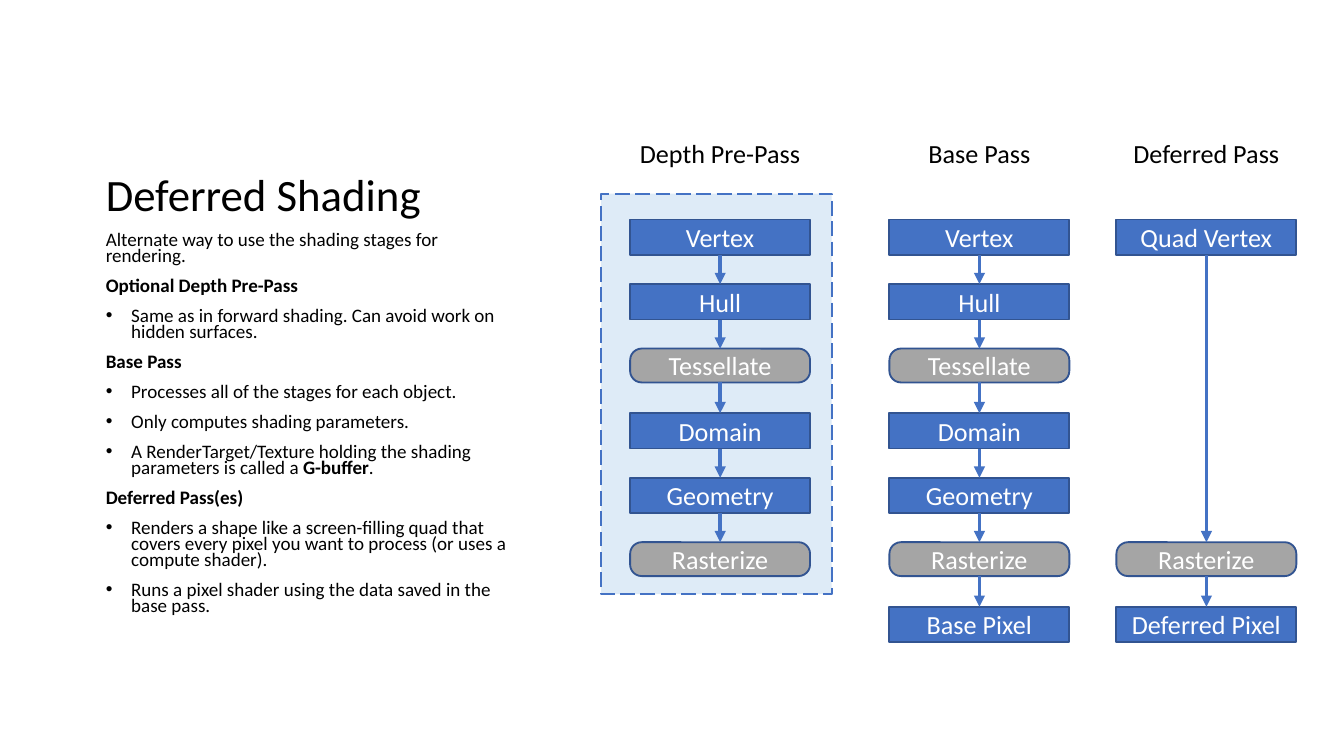
from dataclasses import dataclass
from typing import NamedTuple

from lxml.etree import SubElement
from pptx import Presentation
from pptx.dml.color import RGBColor
from pptx.enum.dml import MSO_LINE_DASH_STYLE as Dash
from pptx.enum.shapes import MSO_CONNECTOR as Connector, MSO_SHAPE as Shape
from pptx.enum.text import MSO_ANCHOR as Anchor, PP_ALIGN as Align
from pptx.oxml.ns import qn
from pptx.util import Cm, Pt


@dataclass(frozen=True)
class Theme:
    font: str = "Calibri"
    ink: str = "000000"
    white: str = "FFFFFF"
    blue: str = "4472C4"
    outline: str = "325491"
    gray: str = "A5A5A5"
    panel: str = "DEEBF7"
    title_size: float = 24
    body_size: float = 10.2
    label_size: float = 14


class Area(NamedTuple):
    left: float
    top: float
    width: float
    height: float


class Stage(NamedTuple):
    row: int
    name: str
    fixed: bool = False  # fixed-function stages are gray and rounded


class RenderPass(NamedTuple):
    heading: str
    heading_width: float
    left: float
    stages: list[Stage]


class Note(NamedTuple):
    spans: list[tuple[str, bool]]  # text, bold
    bullet: bool = False


THEME = Theme()
FIRST_ROW, ROW_STEP = 4.15, 1.22
STAGE_WIDTH, STAGE_HEIGHT, FIXED_HEIGHT = 3.4, 0.67, 0.64
BULLET_INDENT = 0.48
TITLE_AREA = Area(1.75, 0.97, 8.2, 3.33)
BODY_AREA = Area(1.75, 4.3, 8.2, 7.95)
PANEL_AREA = Area(11.36, 3.66, 4.36, 7.57)
HEADING_TOP, HEADING_HEIGHT = 2.47, 0.86

GEOMETRY_STAGES = [
    Stage(0, "Vertex"),
    Stage(1, "Hull"),
    Stage(2, "Tessellate", fixed=True),
    Stage(3, "Domain"),
    Stage(4, "Geometry"),
    Stage(5, "Rasterize", fixed=True),
]
PASSES = [
    RenderPass("Depth Pre-Pass", 3.58, 11.91, GEOMETRY_STAGES),
    RenderPass("Base Pass", 2.46, 16.81, [*GEOMETRY_STAGES, Stage(6, "Base Pixel")]),
    RenderPass("Deferred Pass", 3.3, 21.1, [
        Stage(0, "Quad Vertex"),
        Stage(5, "Rasterize", fixed=True),
        Stage(6, "Deferred Pixel"),
    ]),
]


def head(text: str) -> Note:
    return Note([(text, True)])


def item(text: str) -> Note:
    return Note([(text, False)], bullet=True)


NOTES = [
    Note([("Alternate way to use the shading stages for rendering.", False)]),
    head("Optional Depth Pre-Pass"),
    item("Same as in forward shading. Can avoid work on hidden surfaces."),
    head("Base Pass"),
    item("Processes all of the stages for each object."),
    item("Only computes shading parameters."),
    Note([
        ("A RenderTarget/Texture holding the shading parameters is called a ", False),
        ("G-buffer", True),
        (".", False),
    ], bullet=True),
    head("Deferred Pass(es)"),
    item("Renders a shape like a screen-filling quad that covers every pixel "
         "you want to process (or uses a compute shader)."),
    item("Runs a pixel shader using the data saved in the base pass."),
]


def color(value: str) -> RGBColor:
    return RGBColor.from_string(value)


def lengths(area: Area) -> list[Cm]:
    return [Cm(value) for value in area]


def add_span(para, text: str, *, size: float, ink: str = THEME.ink, bold: bool = False) -> None:
    span = para.add_run()
    span.text = text
    span.font.name = THEME.font
    span.font.size = Pt(size)
    span.font.bold = bold
    span.font.color.rgb = color(ink)


def add_text_box(shapes, area: Area, *, wrap: bool = True, anchor: Anchor = Anchor.TOP):
    frame = shapes.add_textbox(*lengths(area)).text_frame
    frame.word_wrap = wrap
    frame.vertical_anchor = anchor
    return frame


def add_bullet(para) -> None:
    props = para._p.get_or_add_pPr()
    props.set("marL", str(Cm(BULLET_INDENT)))
    props.set("indent", str(-Cm(BULLET_INDENT)))
    SubElement(props, qn("a:buFont"), typeface="Arial")
    SubElement(props, qn("a:buChar"), char="•")


def add_notes(shapes, notes: list[Note]) -> None:
    frame = add_text_box(shapes, BODY_AREA)
    for index, note in enumerate(notes):
        para = frame.add_paragraph() if index else frame.paragraphs[0]
        para.line_spacing = 0.7
        para.space_before = Pt(7.5)
        if note.bullet:
            add_bullet(para)
        for text, bold in note.spans:
            add_span(para, text, size=THEME.body_size, bold=bold)


def add_box(shapes, kind: Shape, area: Area, *, fill: str, line: str):
    box = shapes.add_shape(kind, *lengths(area))
    box.shadow.inherit = False
    box.fill.solid()
    box.fill.fore_color.rgb = color(fill)
    box.line.color.rgb = color(line)
    box.line.width = Pt(1)
    return box


def add_stage(shapes, stage: Stage, left: float):
    kind = Shape.ROUNDED_RECTANGLE if stage.fixed else Shape.RECTANGLE
    height = FIXED_HEIGHT if stage.fixed else STAGE_HEIGHT
    area = Area(left, FIRST_ROW + stage.row * ROW_STEP, STAGE_WIDTH, height)
    box = add_box(shapes, kind, area,
                  fill=THEME.gray if stage.fixed else THEME.blue, line=THEME.outline)
    if stage.fixed:
        box.adjustments[0] = 0.34
    box.text_frame.vertical_anchor = Anchor.MIDDLE
    box.text_frame.word_wrap = False
    para = box.text_frame.paragraphs[0]
    para.alignment = Align.CENTER
    add_span(para, stage.name, size=THEME.label_size, ink=THEME.white)
    return box


def add_arrow(shapes, upper, lower) -> None:
    center = upper.left + upper.width // 2
    arrow = shapes.add_connector(Connector.STRAIGHT, center, upper.top + upper.height,
                                 center, lower.top)
    arrow.line.color.rgb = color(THEME.blue)
    arrow.line.width = Pt(2)
    SubElement(arrow.line._get_or_add_ln(), qn("a:tailEnd"), type="triangle")
    SubElement(arrow._element.spPr, qn("a:effectLst"))


def add_pass(shapes, render_pass: RenderPass) -> None:
    heading_left = render_pass.left + (STAGE_WIDTH - render_pass.heading_width) / 2
    frame = add_text_box(shapes, Area(heading_left, HEADING_TOP, render_pass.heading_width,
                                      HEADING_HEIGHT), wrap=False)
    frame.paragraphs[0].alignment = Align.CENTER
    add_span(frame.paragraphs[0], render_pass.heading, size=THEME.label_size)
    group = shapes.add_group_shape().shapes
    boxes = [add_stage(group, stage, render_pass.left) for stage in render_pass.stages]
    for upper, lower in zip(boxes, boxes[1:]):
        add_arrow(group, upper, lower)


def main() -> None:
    deck = Presentation()
    deck.slide_width, deck.slide_height = Cm(25.4), Cm(14.29)
    page = deck.slides.add_slide(deck.slide_layouts[6])
    title = add_text_box(page.shapes, TITLE_AREA, anchor=Anchor.BOTTOM).paragraphs[0]
    title.line_spacing = 0.9
    add_span(title, "Deferred Shading", size=THEME.title_size)
    add_notes(page.shapes, NOTES)
    panel = add_box(page.shapes, Shape.RECTANGLE, PANEL_AREA, fill=THEME.panel, line=THEME.blue)
    panel.line.dash_style = Dash.LONG_DASH
    for render_pass in PASSES:
        add_pass(page.shapes, render_pass)
    deck.save("out.pptx")


if __name__ == "__main__":
    main()
